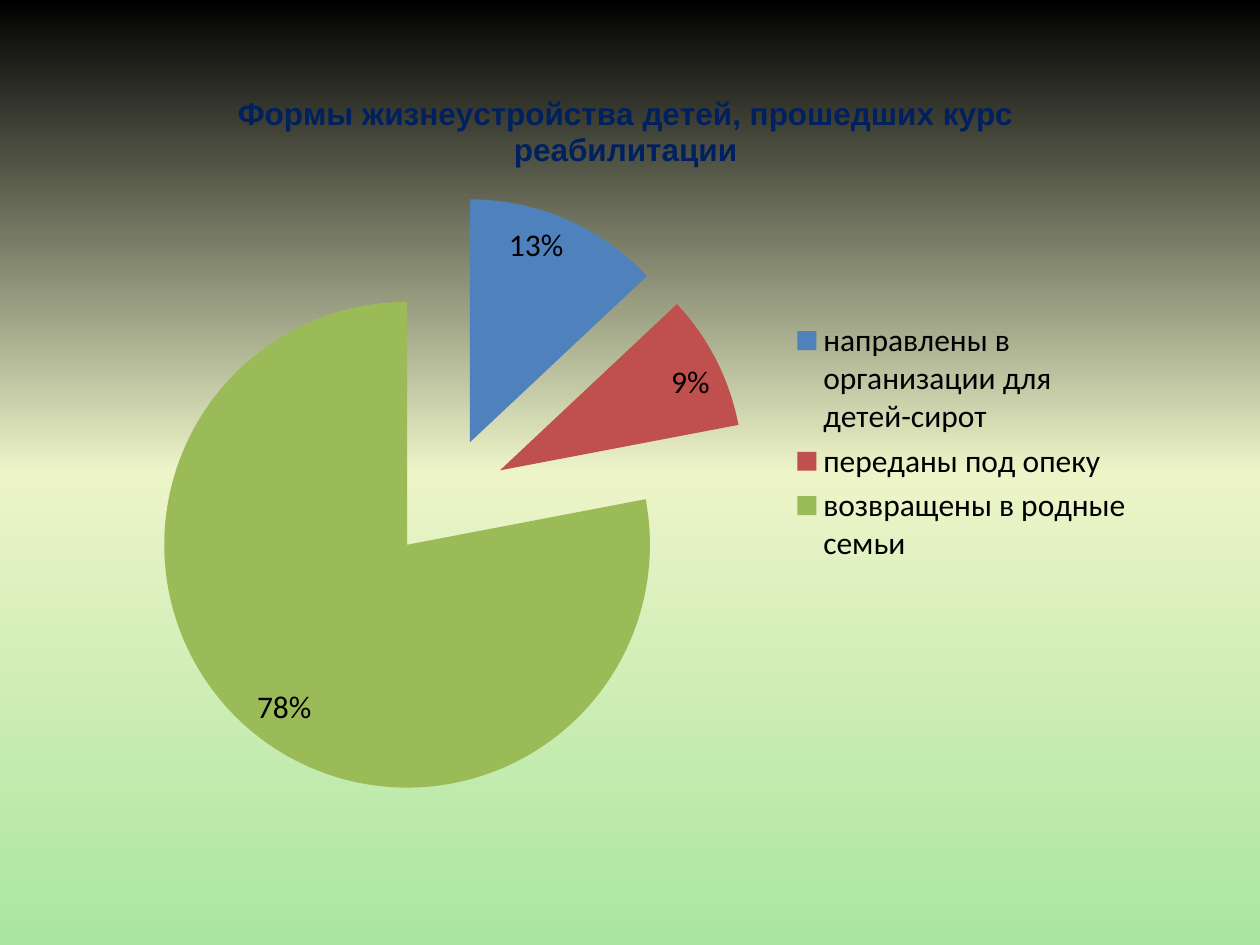
"""Build a slide with an exploded pie chart of child placement outcomes."""
import copy

import lxml.etree
import pptx
import pptx.chart.data
import pptx.dml.color
import pptx.enum.chart
import pptx.oxml.ns
import pptx.util

RGBColor = pptx.dml.color.RGBColor
Inches = pptx.util.Inches

BLACK = RGBColor(0x00, 0x00, 0x00)
NAVY = RGBColor(0x00, 0x20, 0x60)
MINT = RGBColor(0xAA, 0xE6, 0xA0)
CREAM = RGBColor(0xED, 0xF4, 0xC8)
BLUE = RGBColor(0x4F, 0x81, 0xBD)
RED = RGBColor(0xC0, 0x50, 0x4D)
GREEN = RGBColor(0x9B, 0xBB, 0x59)

TITLE = "Формы жизнеустройства детей, прошедших курс реабилитации"
OUTCOMES = [
    ("направлены в организации для детей-сирот", 13, BLUE),
    ("переданы под опеку", 9, RED),
    ("возвращены в родные семьи", 78, GREEN),
]


def set_background(slide, colors):
    fill = slide.background.fill
    fill.gradient()
    fill.gradient_angle = 90
    stops = slide.background._cSld.find(".//" + pptx.oxml.ns.qn("a:gsLst"))
    while len(stops) < len(colors):
        stops.append(copy.deepcopy(stops[-1]))
    for i, (stop, color) in enumerate(zip(fill.gradient_stops, colors)):
        stop.position = i / (len(colors) - 1)
        stop.color.rgb = color


def style_font(font, name, color, bold=False):
    font.name = name
    font.size = pptx.util.Pt(18)
    font.bold = bold
    font.color.rgb = color


def explode(series, percent):
    qn = pptx.oxml.ns.qn
    explosion = lxml.etree.Element(qn("c:explosion"), val=str(percent))
    series._element.find(qn("c:tx")).addnext(explosion)


def add_title(chart, text):
    chart.has_title = True
    chart.chart_title.include_in_layout = False
    p = chart.chart_title.text_frame.paragraphs[0]
    r = p.add_run()
    r.text = text
    style_font(r.font, "Arial", NAVY, bold=True)


def add_legend(chart):
    chart.has_legend = True
    chart.legend.position = pptx.enum.chart.XL_LEGEND_POSITION.RIGHT
    chart.legend.include_in_layout = False


def add_percent_labels(plot):
    plot.has_data_labels = True
    labels = plot.data_labels
    labels.show_value = False
    labels.show_percentage = True
    labels.number_format = "0%"
    labels.number_format_is_linked = False
    labels.position = pptx.enum.chart.XL_LABEL_POSITION.INSIDE_END


def add_pie(slide, title, outcomes):
    names, values, colors = zip(*outcomes)
    data = pptx.chart.data.CategoryChartData()
    data.categories = names
    data.add_series(title, values)
    chart = slide.shapes.add_chart(
        pptx.enum.chart.XL_CHART_TYPE.PIE,
        Inches(0.83), Inches(0.52), Inches(8.27), Inches(5.98), data,
    ).chart
    style_font(chart.font, "Calibri", BLACK)
    add_title(chart, title)
    add_legend(chart)
    plot = chart.plots[0]
    plot.vary_by_categories = True
    add_percent_labels(plot)
    series = plot.series[0]
    explode(series, 25)
    for i, color in enumerate(colors):
        fill = series.points[i].format.fill
        fill.solid()
        fill.fore_color.rgb = color


def main():
    prs = pptx.Presentation()
    prs.slide_width = Inches(10)
    prs.slide_height = Inches(7.5)
    slide = prs.slides.add_slide(prs.slide_layouts[6])
    set_background(slide, [MINT, CREAM, BLACK])
    add_pie(slide, TITLE, OUTCOMES)
    prs.save("out.pptx")


if __name__ == "__main__":
    main()
